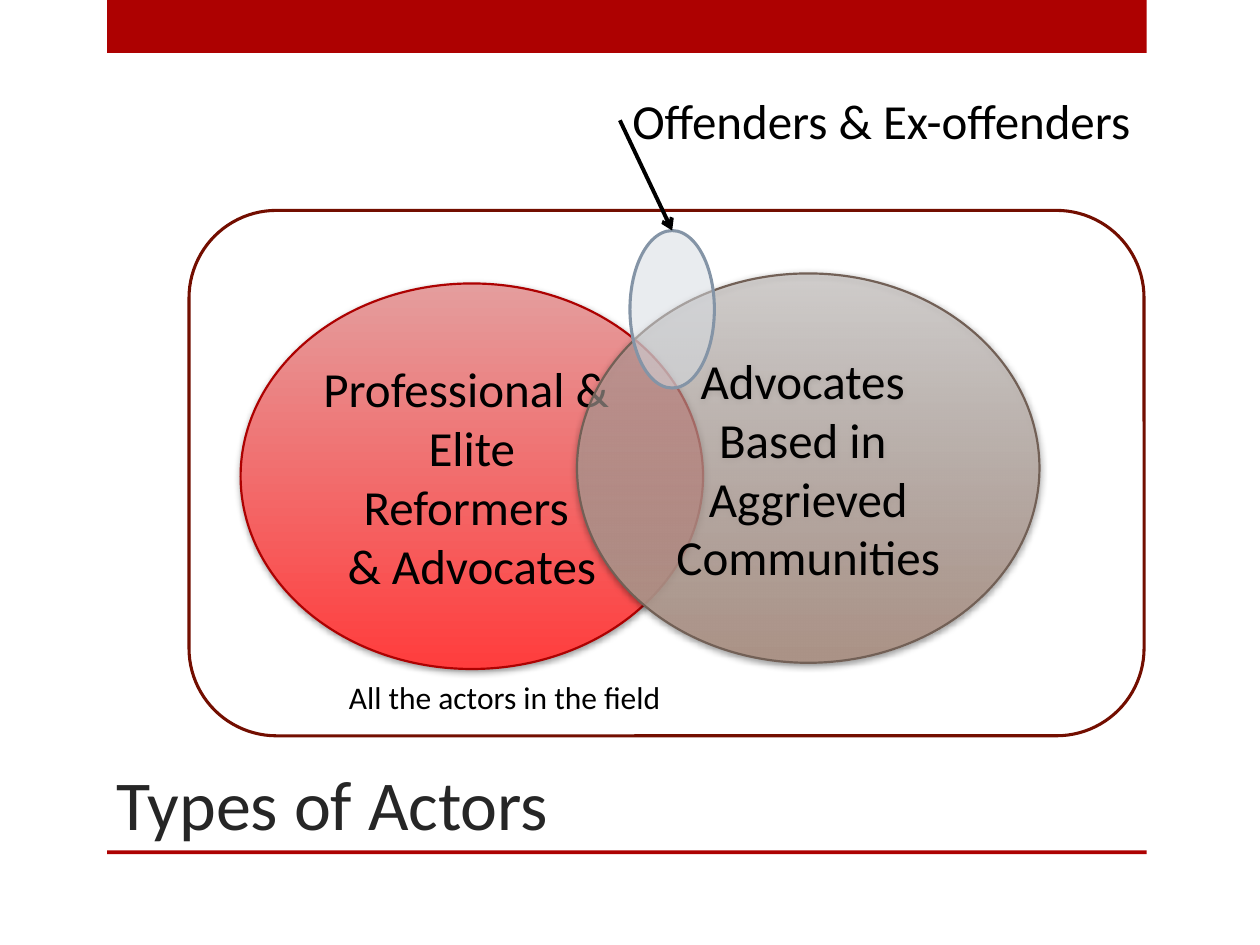
"""Build the "Types of Actors" Venn diagram slide."""
from lxml.etree import SubElement
from pptx import Presentation
from pptx.dml.color import RGBColor
from pptx.enum.shapes import MSO_CONNECTOR as CONNECTOR, MSO_SHAPE as SHAPE
from pptx.enum.text import MSO_ANCHOR as ANCHOR, PP_ALIGN as ALIGN
from pptx.oxml.ns import qn
from pptx.util import Inches, Pt

FONT = "Calibri"
COLORS = {
    "accent": "AD0101", "title": "262626", "text": "000000",
    "elite_top": "E49D9D", "elite_bottom": "FF3D3D",
    "community_top": "C3BBB7", "community_bottom": "AC9387",
    "community_line": "726056", "field_line": "730E00",
    "offender_fill": "D6DBE1", "offender_line": "8494A6",
}


def rgb(name):
    """Return the named colour."""
    return RGBColor.from_string(COLORS[name])


def set_alpha(color_element, percent):
    """Set the opacity of a colour element."""
    SubElement(color_element, qn("a:alpha"), val=str(percent * 1000))


def write_text(tf, lines, size, color="text", align=ALIGN.LEFT):
    """Write one formatted paragraph per line."""
    tf.text = "\n".join(lines)
    for p in tf.paragraphs:
        p.alignment = align
        for r in p.runs:
            r.font.name = FONT
            r.font.size = Pt(size)
            r.font.color.rgb = rgb(color)


def add_shape(slide, kind, box, fill=None, line=None, width=1.25, alpha=None):
    """Add a preset shape with a plain fill and outline."""
    sp = slide.shapes.add_shape(kind, *map(Inches, box))
    sp.shadow.inherit = False
    if fill:
        sp.fill.solid()
        sp.fill.fore_color.rgb = rgb(fill)
        if alpha:
            set_alpha(sp.fill._xPr.find(".//" + qn("a:srgbClr")), alpha)
    else:
        sp.fill.background()
    if line:
        sp.line.color.rgb = rgb(line)
        sp.line.width = Pt(width)
    else:
        sp.line.fill.background()
    return sp


def add_soft_shadow(sp):
    """Add a faint shadow just below a shape."""
    effects = sp._element.spPr.find(qn("a:effectLst"))
    shadow = SubElement(effects, qn("a:outerShdw"), blurRad=str(Pt(4)),
                        dist=str(Pt(1)), dir=str(88 * 60000), rotWithShape="0")
    set_alpha(SubElement(shadow, qn("a:srgbClr"), val=COLORS["text"]), 40)


def add_group_ellipse(slide, box, lines, top, bottom, line, top_alpha=None):
    """Add a labelled ellipse with a top-to-bottom gradient."""
    sp = add_shape(slide, SHAPE.OVAL, box, line=line)
    sp.fill.gradient()
    sp.fill.gradient_angle = 270
    for stop, name, position in zip(sp.fill.gradient_stops, (top, bottom), (0, 1)):
        stop.color.rgb = rgb(name)
        stop.position = position
    if top_alpha:
        set_alpha(sp._element.spPr.find(".//" + qn("a:srgbClr")), top_alpha)
    add_soft_shadow(sp)
    sp.text_frame.vertical_anchor = ANCHOR.MIDDLE
    write_text(sp.text_frame, lines, 28, align=ALIGN.CENTER)


def add_label(slide, box, text, size, color="text", anchor=ANCHOR.TOP, wrap=False):
    """Add a text box with a single line."""
    sp = slide.shapes.add_textbox(*map(Inches, box))
    sp.text_frame.word_wrap = wrap
    sp.text_frame.vertical_anchor = anchor
    write_text(sp.text_frame, [text], size, color)
    return sp


def add_arrow(slide, label, target):
    """Join a label's left side to the top of a shape with an arrow."""
    arrow = slide.shapes.add_connector(CONNECTOR.STRAIGHT, 0, 0, 0, 0)
    arrow.begin_connect(label, 1)
    arrow.end_connect(target, 0)
    arrow.line.color.rgb = rgb("text")
    arrow.line.width = Pt(2.25)
    SubElement(arrow.line._get_or_add_ln(), qn("a:tailEnd"), type="arrow")
    SubElement(arrow._element.spPr, qn("a:effectLst"))


def main():
    """Build and save the slide."""
    prs = Presentation()
    prs.slide_width, prs.slide_height = Inches(10), Inches(7.5)
    slide = prs.slides.add_slide(prs.slide_layouts[6])
    for top, height in ((0, 0.42), (6.75, 0.03)):
        add_shape(slide, SHAPE.RECTANGLE, (0.85, top, 8.25, height), "accent")
    add_label(slide, (0.83, 5, 7.42, 1.75), "Types of Actors", 40, "title",
              ANCHOR.BOTTOM, wrap=True)
    add_group_ellipse(slide, (1.91, 2.25, 3.67, 3.06),
                      ["Professional & ", "Elite Reformers ", "& Advocates"],
                      "elite_top", "elite_bottom", "accent")
    add_group_ellipse(slide, (4.58, 2.17, 3.67, 3.09),
                      ["Advocates ", "Based in ", "Aggrieved Communities"],
                      "community_top", "community_bottom", "community_line", 38)
    add_shape(slide, SHAPE.ROUNDED_RECTANGLE, (1.5, 1.67, 7.58, 4.17),
              line="field_line", width=1.75)
    add_label(slide, (2.67, 5.33, 2.88, 0.4), "All the actors in the field", 18)
    offenders = add_shape(slide, SHAPE.OVAL, (5, 1.83, 0.67, 1.25),
                          "offender_fill", "offender_line", 1.75, alpha=52)
    label = add_label(slide, (4.92, 0.67, 4.22, 0.57), "Offenders & Ex-offenders", 28)
    add_arrow(slide, label, offenders)
    prs.save("out.pptx")


if __name__ == "__main__":
    main()
